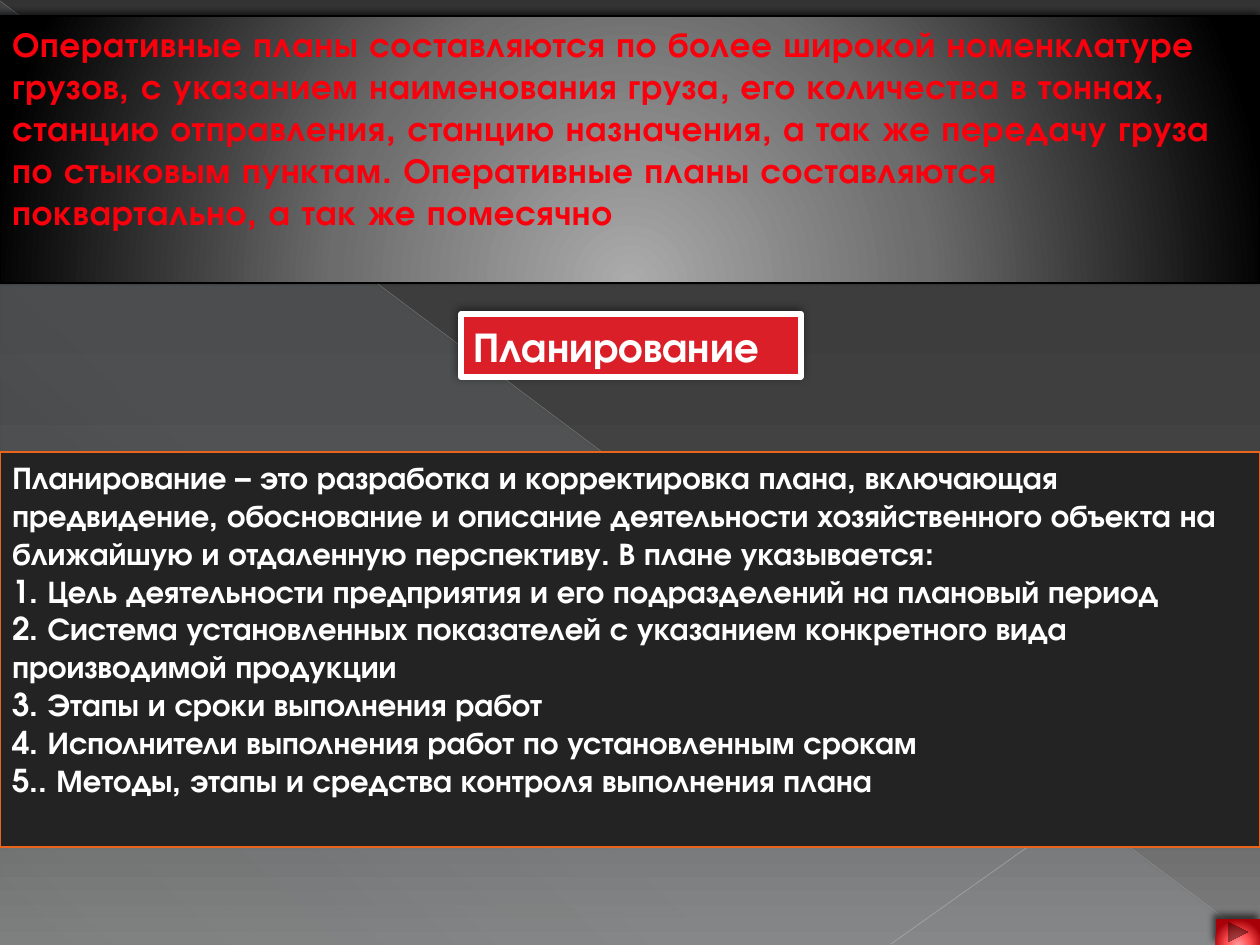
from lxml.etree import SubElement
from pptx import Presentation
from pptx.dml.color import RGBColor
from pptx.enum.shapes import MSO_CONNECTOR, MSO_SHAPE
from pptx.enum.text import MSO_ANCHOR, PP_ALIGN
from pptx.oxml.ns import qn
from pptx.util import Inches, Pt

PX = Inches(1) / 126
FONT = "TeX Gyre Adventor"
rgb = RGBColor.from_string

prs = Presentation()
prs.slide_width, prs.slide_height = round(1260 * PX), round(945 * PX)
s = prs.slides.add_slide(prs.slide_layouts[6])


def set_gradient(owner, fill, stops, angle=None):
    """Fill with (percent, colour, opacity) stops: linear at an angle, else radial from below."""
    fill.gradient()
    grad = next(owner.iter(qn("a:gradFill")))
    for child in list(grad):
        grad.remove(child)
    gs_list = SubElement(grad, qn("a:gsLst"))
    for percent, colour, opacity in stops:
        gs = SubElement(gs_list, qn("a:gs"), pos=str(percent * 1000))
        clr = SubElement(gs, qn("a:srgbClr"), val=colour)
        if opacity < 100:
            SubElement(clr, qn("a:alpha"), val=str(opacity * 1000))
    if angle is not None:
        SubElement(grad, qn("a:lin"), ang=str(angle * 60000), scaled="0")
    else:
        path = SubElement(grad, qn("a:path"), path="circle")
        SubElement(path, qn("a:fillToRect"), l="50000", t="155000", r="50000", b="-55000")


def add_box(kind, x, y, w, h, shadow=None):
    """Add a shape without outline; shadow is (opacity percent, blur pt, distance pt)."""
    sp = s.shapes.add_shape(kind, *[round(v * PX) for v in (x, y, w, h)])
    sp.shadow.inherit = False
    sp.line.fill.background()
    if shadow:
        opacity, blur, dist = shadow
        effects = sp.element.spPr.find(qn("a:effectLst"))
        outer = SubElement(effects, qn("a:outerShdw"), blurRad=str(Pt(blur)),
                           dist=str(Pt(dist)), dir=str(245 * 60000), rotWithShape="0")
        clr = SubElement(outer, qn("a:srgbClr"), val="000000")
        SubElement(clr, qn("a:alpha"), val=str(opacity * 1000))
    return sp


# Backdrop
set_gradient(s.element, s.background.fill,
             [(0, "333333", 100), (60, "444444", 100), (100, "7D7D7D", 100)], 90)
triangle = add_box(MSO_SHAPE.RIGHT_TRIANGLE, 1, 2, 1258, 943)
set_gradient(triangle.element, triangle.fill,
             [(0, "DEF5FA", 10), (70, "DEF5FA", 8), (100, "DEF5FA", 1)], 133)

for ends, colour, width, opacity in [
    ((0, 1, 1259, 944), "B9B9B9", 0.39, 35),
    ((1260, 682, 891, 944), "C1C1C1", 0.47, 45),
]:
    line = s.shapes.add_connector(MSO_CONNECTOR.STRAIGHT, *[round(v * PX) for v in ends])
    line.line.color.rgb = rgb(colour)
    line.line.width = Pt(width)
    clr = next(line.element.iter(qn("a:srgbClr")))
    SubElement(clr, qn("a:alpha"), val=str(opacity * 1000))
    SubElement(line.element.spPr, qn("a:effectLst"))

# Panels
top = add_box(MSO_SHAPE.RECTANGLE, 0, 16, 1260, 267, (60, 4, 3))
set_gradient(top.element, top.fill,
             [(0, "ABABAB", 100), (46, "6C6C6C", 100), (100, "000000", 100)])
title = add_box(MSO_SHAPE.RECTANGLE, 461, 314, 340, 63, (50, 5, 2))
title.fill.solid()
title.fill.fore_color.rgb = rgb("DA1F28")
body = add_box(MSO_SHAPE.RECTANGLE, 0, 452, 1260, 395)
body.fill.solid()
body.fill.fore_color.rgb = rgb("232323")

# Outlines and text
operational = [
    "Оперативные планы составляются по более широкой номенклатуре грузов, с указанием "
    "наименования груза, его количества в тоннах, станцию отправления, станцию назначения, "
    "а так же передачу груза по стыковым пунктам. Оперативные планы составляются "
    "поквартально, а так же помесячно",
]
planning = [
    "Планирование – это разработка и корректировка плана, включающая предвидение, "
    "обоснование и описание деятельности хозяйственного объекта на ближайшую и отдаленную "
    "перспективу. В плане указывается:",
    "1. Цель деятельности предприятия и его подразделений на плановый период",
    "2. Система установленных показателей с указанием конкретного вида производимой продукции",
    "3. Этапы и сроки выполнения работ",
    "4. Исполнители выполнения работ по установленным срокам",
    "5.. Методы, этапы и средства контроля выполнения плана",
]
for sp, outline, width, texts, size, colour in [
    (top, "000000", 0.75, operational, 20, "F9000C"),
    (title, "FFFFFF", 3, ["Планирование"], 24, "FFFFFF"),
    (body, "EB641B", 0.75, planning, 18, "FFFFFF"),
]:
    sp.line.color.rgb = rgb(outline)
    sp.line.width = Pt(width)
    tf = sp.text_frame
    tf.word_wrap = True
    tf.vertical_anchor = MSO_ANCHOR.TOP
    tf.text = "\n".join(texts)
    for p in tf.paragraphs:
        p.alignment = PP_ALIGN.LEFT
        p.font.name = FONT
        p.font.size = Pt(size)
        p.font.bold = True
        p.font.color.rgb = rgb(colour)

# Letter spacing of the upper text, in hundredths of a point
top.text_frame.paragraphs[0].runs[0].font._element.set("spc", "50")

# Button to the next slide
button = add_box(MSO_SHAPE.ACTION_BUTTON_FORWARD_OR_NEXT, 1216, 919, 44, 26, (60, 4, 3))
set_gradient(button.element, button.fill,
             [(0, "FC9A9B", 100), (46, "FF4F52", 100), (100, "A70008", 100)])

prs.save("out.pptx")
